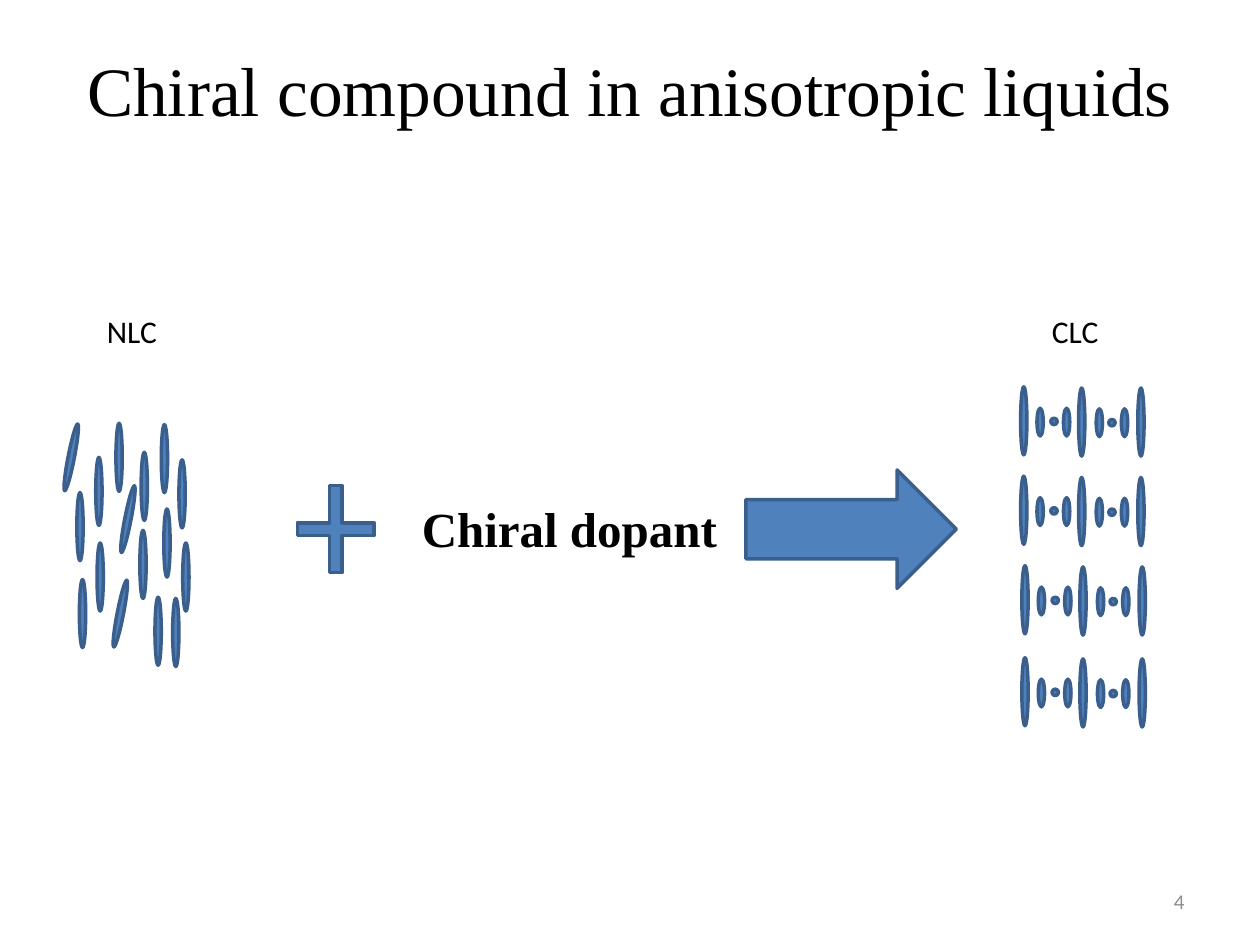
from collections import namedtuple
from pptx import Presentation
from pptx.dml.color import RGBColor
from pptx.enum.shapes import MSO_SHAPE as Shape
from pptx.enum.text import MSO_ANCHOR as Anchor, MSO_AUTO_SIZE as Fit, PP_ALIGN as Align
from pptx.util import Inches, Pt

Box = namedtuple("Box", "left top width height")

COLUMNS, ROWS = 100, 75
CELL = Inches(10) // COLUMNS
COLORS = {"fill": "4F81BD", "line": "3A5F8C", "text": "000000", "number": "8C8C8C"}
SERIF, SANS = "Times New Roman", "Calibri"

ROD_WIDTH = 0.5
ROD_HEIGHTS = {"long": 5.4, "short": 2.2, "dot": 0.5}
TILT = 11

NEMATIC_RODS = [
    (0, 0, TILT), (2.2, 2.7, 0), (3.8, 0, 0), (4.5, 4.9, TILT),
    (5.8, 2.3, 0), (0.7, 5.5, 0), (2.3, 9.5, 0), (7.6, 6.8, 0),
    (7.4, 0.1, 0), (9.1, 9.5, 0), (6.9, 13.8, 0), (8.3, 13.9, 0),
    (8.8, 2.9, 0), (3.9, 12.4, TILT), (5.7, 8.5, 0), (0.9, 12.4, 0),
]
HELIX_RODS = [
    (0, 0, "long"), (1.3, 0.1, "short"), (2.4, 0.05, "dot"),
    (3.4, 0.1, "short"), (4.6, 0.1, "long"), (6, 0.15, "short"),
    (7, 0.15, "dot"), (8, 0.15, "short"), (9.3, 0.1, "long"),
]
HELIX_LAYERS = [(0, 0), (0, 7.1), (0.1, 14.2), (0.1, 21.5)]


def cells(box):
    return [round(length * CELL) for length in box]


def add_text(parent, box, words, size, font, color="text", bold=False,
             align=Align.LEFT, anchor=Anchor.TOP, wrap=False):
    label = parent.shapes.add_textbox(*cells(box))
    frame = label.text_frame
    frame.word_wrap = wrap
    frame.auto_size = Fit.NONE if wrap else Fit.SHAPE_TO_FIT_TEXT
    frame.vertical_anchor = anchor
    para = frame.paragraphs[0]
    para.alignment = align
    span = para.add_run()
    span.text = words
    span.font.size = Pt(size)
    span.font.name = font
    span.font.bold = bold
    span.font.color.rgb = RGBColor.from_string(COLORS[color])


def add_solid(parent, kind, box):
    solid = parent.shapes.add_shape(kind, *cells(box))
    solid.shadow.inherit = False
    solid.fill.solid()
    solid.fill.fore_color.rgb = RGBColor.from_string(COLORS["fill"])
    solid.line.color.rgb = RGBColor.from_string(COLORS["line"])
    solid.line.width = Pt(2)
    return solid


def add_rod(parent, left, top, kind="long", tilt=0):
    rod = add_solid(parent, Shape.OVAL, Box(left, top, ROD_WIDTH, ROD_HEIGHTS[kind]))
    rod.rotation = tilt


def add_nematic(page, box):
    add_text(page, Box(box.left + 2.1, box.top, 6, 4), "NLC", 18, SANS)
    group = page.shapes.add_group_shape()
    for left, top, tilt in NEMATIC_RODS:
        add_rod(group, box.left + left, box.top + 9.3 + top, tilt=tilt)


def add_cholesteric(page, box):
    group = page.shapes.add_group_shape()
    add_text(group, Box(box.left + 1.5, box.top, 5.8, 4), "CLC", 18, SANS)
    for shift, layer in HELIX_LAYERS:
        for left, drop, kind in HELIX_RODS:
            centring = (ROD_HEIGHTS["long"] - ROD_HEIGHTS[kind]) / 2
            add_rod(group, box.left + shift + left,
                    box.top + 6.4 + layer + drop + centring, kind)


def add_reaction(page, box):
    group = page.shapes.add_group_shape()
    add_text(group, Box(box.left + 10, box.top + 1.8, 25.7, 5.7),
             "Chiral dopant", 28, SERIF, bold=True)
    plus = add_solid(group, Shape.MATH_PLUS, Box(box.left, box.top, 8.3, box.height))
    plus.adjustments[0] = 0.121
    arrow_width = 16.7
    add_solid(group, Shape.RIGHT_ARROW,
              Box(box.left + box.width - arrow_width, box.top, arrow_width, box.height))


def add_heading(page, box):
    add_text(page, box, "Chiral compound in anisotropic liquids", 39.6, SERIF,
             align=Align.CENTER, anchor=Anchor.MIDDLE, wrap=True)


def add_page_number(page, box):
    add_text(page, box, "4", 12, SANS, color="number",
             align=Align.RIGHT, anchor=Anchor.MIDDLE, wrap=True)


def main():
    deck = Presentation()
    deck.slide_width, deck.slide_height = COLUMNS * CELL, ROWS * CELL
    page = deck.slides.add_slide(deck.slide_layouts[6])
    add_heading(page, Box(5, 0.8, 90, 12.5))
    add_nematic(page, Box(5.4, 24.3, 9.6, 28.6))
    add_cholesteric(page, Box(81, 24.3, 9.8, 33.4))
    add_reaction(page, Box(22.5, 37.3, 53.4, 9.4))
    add_page_number(page, Box(71.7, 69.5, 23.3, 4))
    deck.save("out.pptx")


if __name__ == "__main__":
    main()
